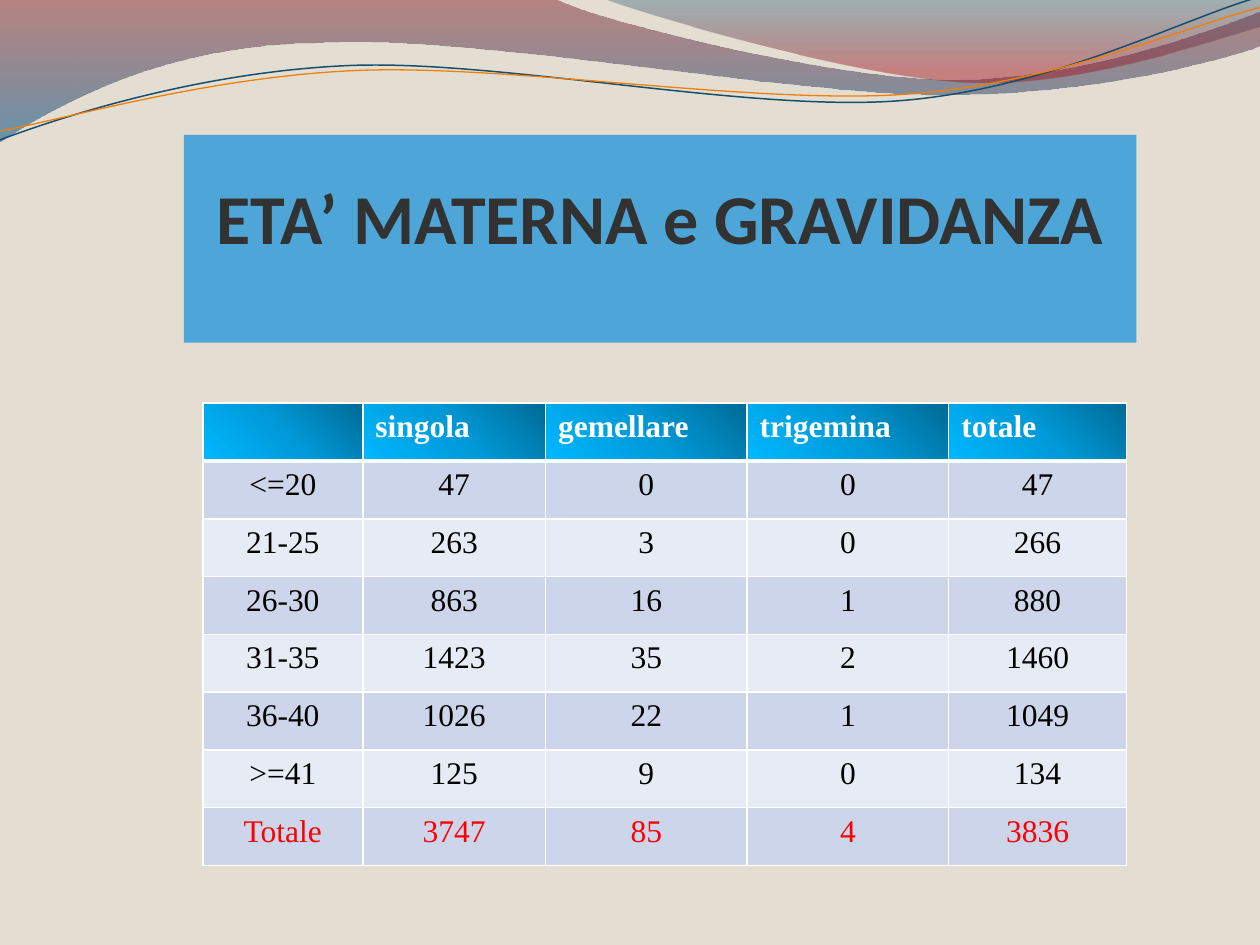
import copy
import math

from lxml import etree
from pptx import Presentation
from pptx.dml.color import RGBColor
from pptx.enum import shapes, text
from pptx.oxml import ns
from pptx.util import Inches, Pt

COLORS = {
    "page": "E3DED1", "banner": "4EA5D8", "title": "323232",
    "white": "FFFFFF", "black": "000000", "red": "FF0000",
    "band": "CCD5EA", "light": "E7EBF5",
    "navy": "184E6D", "orange": "F07F09",
}
TITLE = "ETA’ MATERNA e GRAVIDANZA"
ROWS = [
    ("", "singola", "gemellare", "trigemina", "totale"),
    ("<=20", "47", "0", "0", "47"),
    ("21-25", "263", "3", "0", "266"),
    ("26-30", "863", "16", "1", "880"),
    ("31-35", "1423", "35", "2", "1460"),
    ("36-40", "1026", "22", "1", "1049"),
    (">=41", "125", "9", "0", "134"),
    ("Totale", "3747", "85", "4", "3836"),
]
COLUMN_WIDTHS = (1.27, 1.45, 1.6, 1.6, 1.41)
TABLE_HEIGHT = 3.67

# Gradient stops: position %, colour, opacity %
HEADER_STOPS = [(0, "006A96", 100), (50, "009AD9", 100), (100, "00B8FF", 100)]
# Paths: pairs are straight points, six numbers are a Bezier curve
AREAS = [
    {"stops": [(0, "7E1621", 45), (100, "005689", 55)],
     "path": [(0, -0.01), (4.4, -0.01), (4.76, 0.17, 6.64, 0.63, 7.58, 0.63),
              (8.53, 0.63, 9.58, 0.26, 10, 0.09), (10.01, 0.36),
              (9.83, 0.44, 8.7, 0.76, 7.46, 0.75), (6.22, 0.75, 3.82, 0.28, 2.57, 0.34),
              (1.29, 0.35, 0.46, 0.83, -0.01, 1.13), (0, -0.01)]},
    {"stops": [(0, "094467", 30), (80, "A10F1F", 45)],
     "path": [(4.79, -0.01), (5.09, 0.11, 6.82, 0.62, 7.69, 0.65),
              (8.56, 0.69, 9.61, 0.32, 10, 0.21), (10, 0), (4.79, -0.01)]},
]
WAVE_TILT = -2.7
WAVES = [
    {"color": "navy", "width": 0.85, "center": (4.99, 0.58),
     "path": [(0, 1.11), (0.48, 0.93, 1.58, 0.57, 2.77, 0.52),
              (3.95, 0.47, 5.93, 0.89, 7.13, 0.8), (8.33, 0.71, 9.38, 0.15, 9.98, -0.02)]},
    {"color": "orange", "width": 0.75, "center": (5, 0.59),
     "path": [(0, 1.04), (0.47, 0.96, 1.64, 0.61, 2.83, 0.56),
              (4.03, 0.51, 5.97, 0.83, 7.17, 0.75), (8.36, 0.67, 9.41, 0.21, 10, 0.06)]},
]


def rgb(name):
    return RGBColor.from_string(COLORS[name])


def add_xml(parent, tag, **attributes):
    return etree.SubElement(parent, ns.qn(tag), {k: str(v) for k, v in attributes.items()})


def paint_gradient(fill, properties, stops, angle):
    fill.background()
    placeholder = properties.find(ns.qn("a:noFill"))
    gradient = etree.Element(ns.qn("a:gradFill"), rotWithShape="1")
    stop_list = add_xml(gradient, "a:gsLst")
    for position, color, opacity in stops:
        stop = add_xml(stop_list, "a:gs", pos=position * 1000)
        shade = add_xml(stop, "a:srgbClr", val=color)
        if opacity < 100:
            add_xml(shade, "a:alpha", val=opacity * 1000)
    add_xml(gradient, "a:lin", ang=angle * 60000, scaled=0)
    properties.replace(placeholder, gradient)


def turn(points, center, degrees):
    cx, cy = center
    cos, sin = math.cos(math.radians(degrees)), math.sin(math.radians(degrees))
    return [(cx + (x - cx) * cos - (y - cy) * sin,
             cy + (x - cx) * sin + (y - cy) * cos) for x, y in points]


def add_outline(page, path, close, center=(0, 0), tilt=0):
    """Build a freeform, then join each three control points into a curve."""
    points = [part[i:i + 2] for part in path for i in range(0, len(part), 2)]
    emu = [(Inches(x), Inches(y)) for x, y in turn(points, center, -tilt)]
    builder = page.shapes.build_freeform(*emu[0])
    builder.add_line_segments(emu[1:], close=close)
    outline = builder.convert_to_shape()
    outline.shadow.inherit = False
    outline.rotation = tilt
    segments = iter(list(outline._element.iter(ns.qn("a:lnTo"))))
    for part in path[1:]:
        segment = next(segments)
        if len(part) == 6:
            curve = etree.Element(ns.qn("a:cubicBezTo"))
            segment.addprevious(curve)
            for piece in (segment, next(segments), next(segments)):
                curve.append(piece[0])
                piece.getparent().remove(piece)
    return outline


def write(frame, words, size=18, font="Times New Roman", color="black",
          bold=False, align=text.PP_ALIGN.CENTER):
    para = frame.paragraphs[0]
    para.alignment = align
    span = para.add_run()
    span.text = words
    span.font.size, span.font.name, span.font.bold = Pt(size), font, bold
    span.font.color.rgb = rgb(color)
    return para


def add_borders(cell, top=1, bottom=1):
    properties = cell._tc.get_or_add_tcPr()
    for side, width in (("L", 1), ("R", 1), ("T", top), ("B", bottom)):
        line = add_xml(properties, f"a:ln{side}", w=Pt(width))
        add_xml(add_xml(line, "a:solidFill"), "a:srgbClr", val=COLORS["white"])


def add_decoration(page):
    for area in AREAS:
        shape = add_outline(page, area["path"], close=True)
        shape.line.fill.background()
        paint_gradient(shape.fill, shape._element.spPr, area["stops"], 90)
    for wave in WAVES:
        shape = add_outline(page, wave["path"], False, wave["center"], WAVE_TILT)
        shape.fill.background()
        shape.line.color.rgb = rgb(wave["color"])
        shape.line.width = Pt(wave["width"])


def add_age_table(page):
    table = page.shapes.add_table(
        len(ROWS), len(COLUMN_WIDTHS), Inches(1.61), Inches(3.2),
        Inches(sum(COLUMN_WIDTHS)), Inches(TABLE_HEIGHT)).table
    table.horz_banding = False
    for column, width in zip(table.columns, COLUMN_WIDTHS):
        column.width = Inches(width)
    for r, values in enumerate(ROWS):
        table.rows[r].height = Inches(TABLE_HEIGHT / len(ROWS))
        for c, value in enumerate(values):
            cell = table.cell(r, c)
            add_borders(cell, top=3 if r == 1 else 1, bottom=3 if r == 0 else 1)
            if r == 0:
                paint_gradient(cell.fill, cell._tc.tcPr, HEADER_STOPS, 135)
                style = {"color": "white", "bold": True, "align": text.PP_ALIGN.LEFT}
            else:
                cell.fill.solid()
                cell.fill.fore_color.rgb = rgb("band" if r % 2 else "light")
                style = {"color": "red" if r == len(ROWS) - 1 else "black"}
            if value:
                write(cell.text_frame, value, **style)


def add_title(page):
    box = page.shapes.add_shape(shapes.MSO_SHAPE.RECTANGLE, Inches(1.46), Inches(1.07),
                                Inches(7.56), Inches(1.65))
    box.shadow.inherit = False
    box.fill.solid()
    box.fill.fore_color.rgb = rgb("banner")
    box.line.fill.background()
    frame = box.text_frame
    frame.word_wrap = True
    frame.vertical_anchor = text.MSO_ANCHOR.BOTTOM
    frame.margin_left = frame.margin_right = frame.margin_bottom = 0
    frame.margin_top = Inches(0.05)
    para = write(frame, TITLE, size=40, font="Calibri", color="title", bold=True)
    # The closing line break keeps the height of the title text
    para.add_line_break()
    run_format = para.runs[0]._r.rPr
    para._p[-1].append(copy.deepcopy(run_format))
    end_format = add_xml(para._p, "a:endParaRPr", **run_format.attrib)
    end_format.extend(copy.deepcopy(list(run_format)))


def main():
    deck = Presentation()
    deck.slide_width, deck.slide_height = Inches(10), Inches(7.5)
    page = deck.slides.add_slide(deck.slide_layouts[6])
    page.background.fill.solid()
    page.background.fill.fore_color.rgb = rgb("page")
    add_decoration(page)
    add_age_table(page)
    add_title(page)
    deck.save("out.pptx")


if __name__ == "__main__":
    main()
